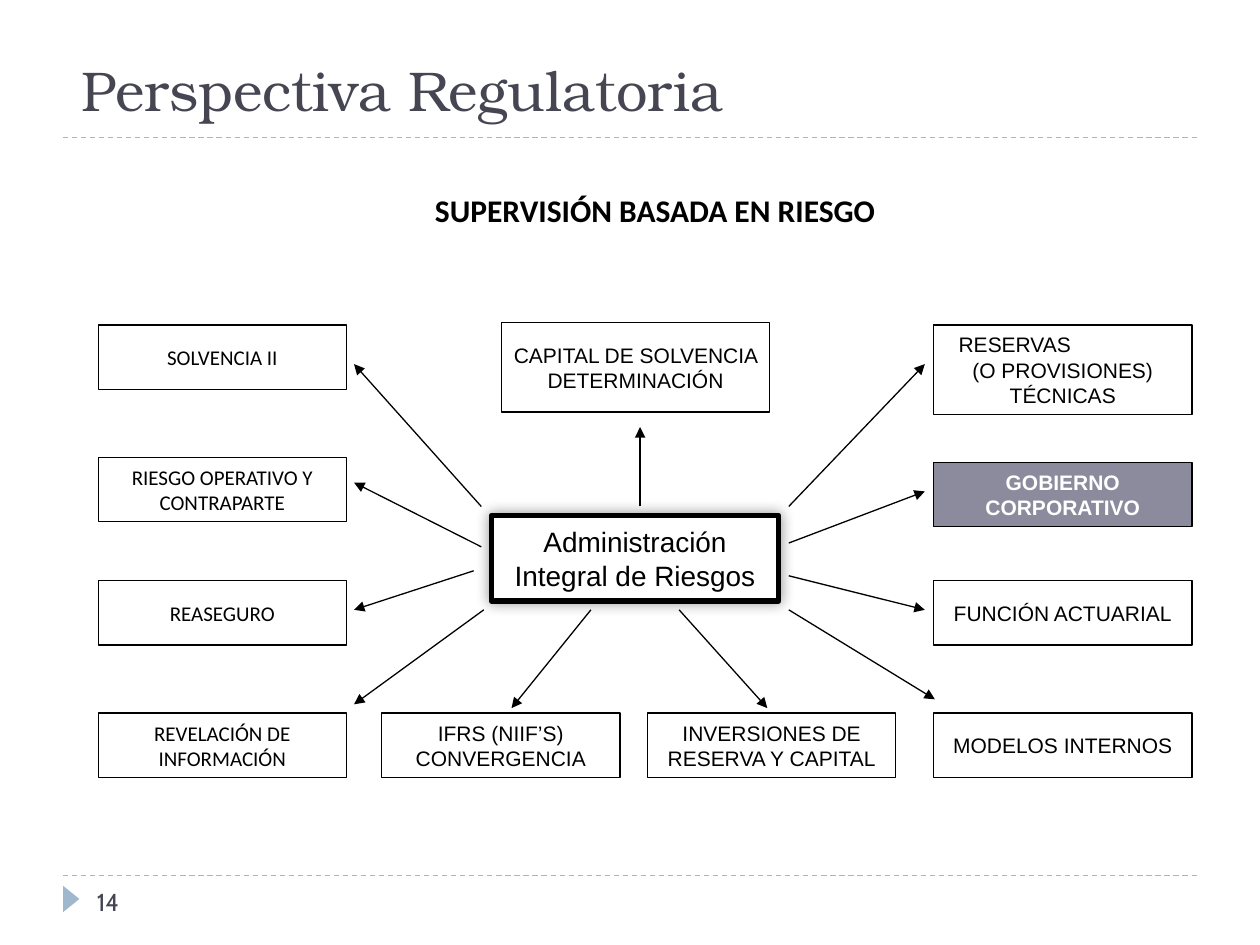
from dataclasses import dataclass

from lxml import etree
from pptx import Presentation
from pptx.dml.color import RGBColor
from pptx.enum.dml import MSO_LINE
from pptx.enum.shapes import MSO_CONNECTOR, MSO_SHAPE
from pptx.enum.text import MSO_ANCHOR, PP_ALIGN
from pptx.oxml import parse_xml
from pptx.oxml.ns import nsdecls, qn
from pptx.util import Inches, Pt

STRAIGHT = MSO_CONNECTOR.STRAIGHT
RECTANGLE, TRIANGLE = MSO_SHAPE.RECTANGLE, MSO_SHAPE.ISOSCELES_TRIANGLE
TOP, MIDDLE, BOTTOM = MSO_ANCHOR.TOP, MSO_ANCHOR.MIDDLE, MSO_ANCHOR.BOTTOM
LEFT, CENTER = PP_ALIGN.LEFT, PP_ALIGN.CENTER
DASH = MSO_LINE.DASH


@dataclass(frozen=True)
class Theme:
    black: str = "000000"
    white: str = "FFFFFF"
    heading: str = "464653"
    accent: str = "9FB8CD"
    highlight: str = "8B8B9D"
    title_font: str = "TeX Gyre Bonum"
    number_font: str = "Cabin"
    sans: str = "Arial"
    humanist: str = "Calibri"
    title_size: int = 32
    subtitle_size: int = 18
    hub_size: int = 16
    number_size: int = 14
    topic_size: int = 12
    thin: float = 0.75
    thick: float = 3


THEME = Theme()


@dataclass(frozen=True)
class Style:
    font: str = THEME.sans
    size: int = THEME.topic_size
    color: str = THEME.black
    bold: bool = False
    align: PP_ALIGN = CENTER
    anchor: MSO_ANCHOR = MIDDLE


@dataclass(frozen=True)
class Box:
    text: str
    left: float
    top: float
    width: float
    height: float
    style: Style = Style()
    fill: str = THEME.white
    line: float = THEME.thin


@dataclass(frozen=True)
class Arrow:
    x1: float
    y1: float
    x2: float
    y2: float


TOPIC = Style()
LEFT_TOPIC = Style(font=THEME.humanist)
KEY_TOPIC = Style(color=THEME.white, bold=True)

LEFT_X, LEFT_W = 0.78, 1.97
RIGHT_X, RIGHT_W = 7.41, 2.05
ROW_H = 0.51
BOTTOM_Y = 5.66

HUB = Box("Administración Integral de Riesgos", 3.9, 4.09, 2.28, 0.68,
          Style(size=THEME.hub_size), line=THEME.thick)
RESERVES = Box("RESERVAS\n(O PROVISIONES) TÉCNICAS", RIGHT_X, 2.58, RIGHT_W, 0.71)

LEFT_TOPICS = [
    Box(text, LEFT_X, top, LEFT_W, ROW_H, LEFT_TOPIC)
    for text, top in [
        ("SOLVENCIA II", 2.58),
        ("RIESGO OPERATIVO Y CONTRAPARTE", 3.63),
        ("REASEGURO", 4.61),
        ("REVELACIÓN DE INFORMACIÓN", BOTTOM_Y),
    ]
]
RIGHT_TOPICS = [
    Box("GOBIERNO CORPORATIVO", RIGHT_X, 3.67, RIGHT_W, ROW_H, KEY_TOPIC, THEME.highlight),
    Box("FUNCIÓN ACTUARIAL", RIGHT_X, 4.61, RIGHT_W, ROW_H),
    Box("MODELOS INTERNOS", RIGHT_X, BOTTOM_Y, RIGHT_W, ROW_H),
]
MIDDLE_TOPICS = [
    Box("CAPITAL DE SOLVENCIA DETERMINACIÓN", 3.98, 2.56, 2.13, 0.71),
    Box("IFRS (NIIF’S) CONVERGENCIA", 3.03, BOTTOM_Y, 1.89, ROW_H),
    Box("INVERSIONES DE RESERVA Y CAPITAL", 5.14, BOTTOM_Y, LEFT_W, ROW_H),
]
ARROWS = [
    Arrow(3.82, 4.02, 2.81, 2.89),
    Arrow(3.82, 4.34, 2.81, 3.83),
    Arrow(3.76, 4.53, 2.81, 4.84),
    Arrow(3.84, 4.84, 2.81, 5.59),
    Arrow(4.69, 4.84, 4.06, 5.62),
    Arrow(5.39, 4.84, 6.09, 5.62),
    Arrow(6.26, 4.84, 7.42, 5.55),
    Arrow(6.26, 4.57, 7.34, 4.84),
    Arrow(6.26, 4.31, 7.34, 3.9),
    Arrow(6.26, 4.02, 7.34, 2.89),
    Arrow(5.08, 4.02, 5.08, 3.39),
]
LABELS = [
    Box("Perspectiva Regulatoria", 0.55, 0, 9, 1.02,
        Style(THEME.title_font, THEME.title_size, THEME.heading, align=LEFT, anchor=BOTTOM)),
    Box("SUPERVISIÓN BASADA EN RIESGO", 2.53, 1.47, 5.34, 0.4,
        Style(THEME.humanist, THEME.subtitle_size, bold=True)),
    Box("14", 0.67, 6.99, 2.17, 0.4,
        Style(THEME.number_font, THEME.number_size, THEME.heading, align=LEFT, anchor=TOP)),
]


def rgb(value: str) -> RGBColor:
    return RGBColor.from_string(value)


def place(box: Box) -> list:
    return [Inches(v) for v in (box.left, box.top, box.width, box.height)]


def write(sp, text: str, style: Style) -> None:
    tf = sp.text_frame
    tf.word_wrap = True
    tf.vertical_anchor = style.anchor
    formats = {"name": style.font, "size": Pt(style.size), "bold": style.bold}
    for i, line in enumerate(text.split("\n")):
        p = tf.paragraphs[0] if i == 0 else tf.add_paragraph()
        p.alignment = style.align
        r = p.add_run()
        r.text = line
        for name, value in formats.items():
            setattr(r.font, name, value)
        r.font.color.rgb = rgb(style.color)


def add_box(slide, box: Box):
    sp = slide.shapes.add_shape(RECTANGLE, *place(box))
    sp.shadow.inherit = False
    sp.fill.solid()
    sp.fill.fore_color.rgb = rgb(box.fill)
    sp.line.color.rgb = rgb(THEME.black)
    sp.line.width = Pt(box.line)
    write(sp, box.text, box.style)
    return sp


def add_line(slide, x1: float, y1: float, x2: float, y2: float, color: str):
    line = slide.shapes.add_connector(STRAIGHT, *[Inches(v) for v in (x1, y1, x2, y2)])
    line.line.color.rgb = rgb(color)
    line.line.width = Pt(THEME.thin)
    etree.SubElement(line._element.spPr, qn("a:effectLst"))
    return line


def add_arrow(slide, arrow: Arrow) -> None:
    line = add_line(slide, arrow.x1, arrow.y1, arrow.x2, arrow.y2, THEME.black)
    etree.SubElement(line.line._get_or_add_ln(), qn("a:tailEnd"), type="triangle")


def add_glow_shadow(sp) -> None:
    """Give the shape a soft dark shadow around its edges."""
    sp._element.spPr.find(qn("a:effectLst")).append(parse_xml(
        f'<a:outerShdw {nsdecls("a")} blurRad="{Pt(8)}" dist="0" dir="14460000">'
        f'<a:srgbClr val="{THEME.black}"><a:alpha val="40000"/></a:srgbClr></a:outerShdw>'))


def add_frame(slide) -> None:
    """Draw the dashed rules and the marker beside the page number."""
    for y in (1.09, 6.95):
        add_line(slide, 0.5, y, 9.5, y, THEME.accent).line.dash_style = DASH
    sp = slide.shapes.add_shape(TRIANGLE, *[Inches(v) for v in (0.46, 7.07, 0.21, 0.13)])
    sp.rotation = 90
    sp.shadow.inherit = False
    sp.fill.solid()
    sp.fill.fore_color.rgb = rgb(THEME.accent)
    sp.line.fill.background()


def main() -> None:
    prs = Presentation()
    prs.slide_width, prs.slide_height = Inches(10), Inches(7.5)
    slide = prs.slides.add_slide(prs.slide_layouts[6])
    add_frame(slide)
    add_glow_shadow(add_box(slide, HUB))
    for box in LEFT_TOPICS + MIDDLE_TOPICS + RIGHT_TOPICS:
        add_box(slide, box)
    first = add_box(slide, RESERVES).text_frame.paragraphs[0]
    first.alignment = LEFT
    first._p.get_or_add_pPr().set("marL", str(Inches(0.1)))
    for arrow in ARROWS:
        add_arrow(slide, arrow)
    for label in LABELS:
        write(slide.shapes.add_textbox(*place(label)), label.text, label.style)
    prs.save("out.pptx")


if __name__ == "__main__":
    main()
